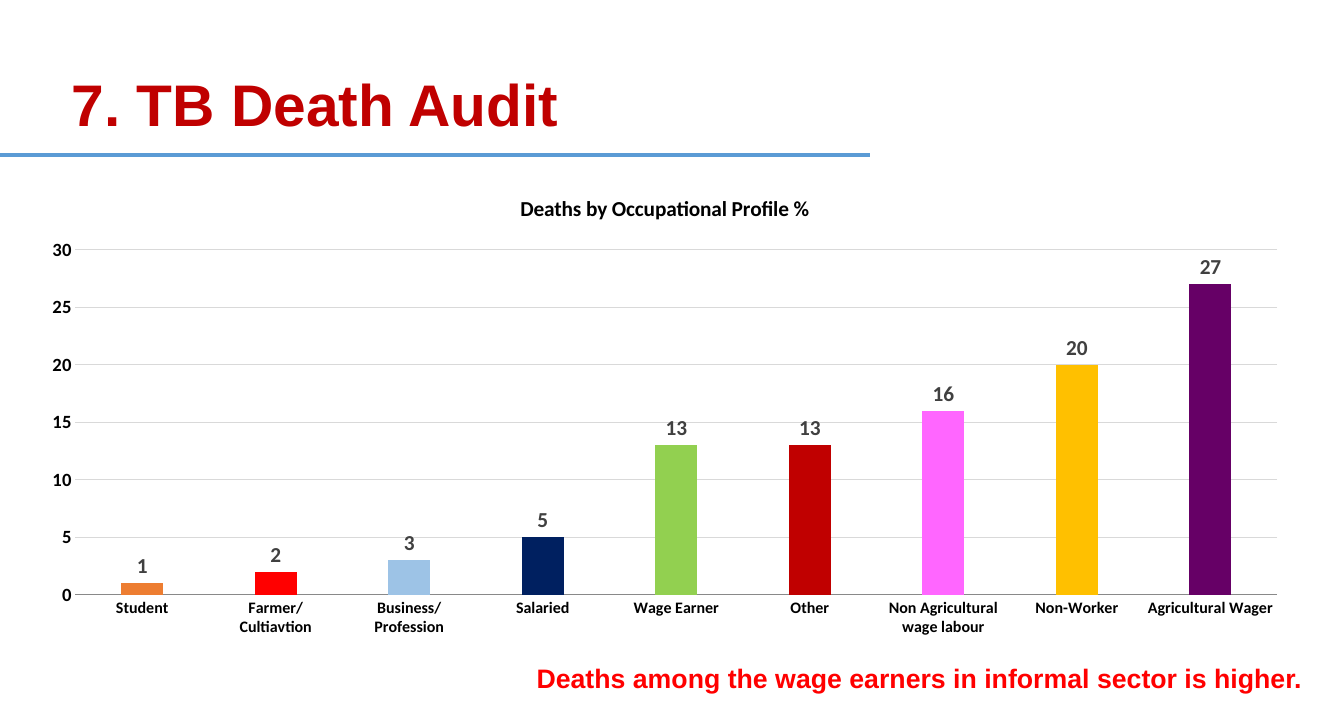
"""Build the TB death audit slide with its occupation chart."""
from dataclasses import dataclass

from lxml import etree
from pptx import Presentation
from pptx import util as u
from pptx.chart.data import CategoryChartData
from pptx.dml.color import RGBColor
from pptx.enum import chart as ch, shapes, text
from pptx.oxml.ns import qn

WIDE, HIGH = u.Inches(14), u.Inches(7.5)
GRID = 100


@dataclass(frozen=True)
class Box:
    """Place on a grid of 100 columns and 100 rows."""
    col: float
    row: float
    cols: float
    rows: float

    def emu(self) -> tuple:
        """Return left, top, width and height."""
        return (across(self.col), down(self.row),
                across(self.cols), down(self.rows))


@dataclass(frozen=True)
class Label:
    """Line of bold text with its look."""
    words: str
    box: Box
    size: int
    color: str
    align: text.PP_ALIGN
    wrap: bool


@dataclass(frozen=True)
class Bar:
    """Column of the chart."""
    name: str
    value: int
    color: str


LABELS = (
    Label("7. TB Death Audit", Box(4.29, 8.8, 38, 11.2), 44, "C00000",
          text.PP_ALIGN.RIGHT, False),
    Label("Deaths among the wage earners in informal sector is higher.",
          Box(38.21, 91.2, 60.43, 5.87), 20, "FF0000",
          text.PP_ALIGN.CENTER, True),
)
BARS = (
    Bar("Student", 1, "ED7D31"),
    Bar("Farmer/Cultiavtion", 2, "FF0000"),
    Bar("Business/Profession", 3, "9DC3E6"),
    Bar("Salaried", 5, "002060"),
    Bar("Wage Earner", 13, "92D050"),
    Bar("Other", 13, "C00000"),
    Bar("Non Agricultural wage labour", 16, "FF66FF"),
    Bar("Non-Worker", 20, "FFC000"),
    Bar("Agricultural Wager", 27, "660066"),
)


def across(cols: float) -> int:
    """Turn columns into a length."""
    return int(WIDE * cols / GRID)


def down(rows: float) -> int:
    """Turn rows into a length."""
    return int(HIGH * rows / GRID)


def tint(form, color: str) -> None:
    """Set the colour of a font or line."""
    form.color.rgb = RGBColor.from_string(color)


def paint(fill, color: str) -> None:
    """Set a solid fill."""
    fill.solid()
    fill.fore_color.rgb = RGBColor.from_string(color)


def apply(item, **values) -> None:
    """Set each named attribute."""
    for name, value in values.items():
        setattr(item, name, value)


def style(font, size: int, color: str, face: str = "Calibri") -> None:
    """Make a font bold with size, colour and face."""
    apply(font, name=face, size=u.Pt(size), bold=True)
    tint(font, color)


def write(slide, label: Label) -> None:
    """Add a text box."""
    frame = slide.shapes.add_textbox(*label.box.emu()).text_frame
    apply(frame, word_wrap=label.wrap,
          auto_size=text.MSO_AUTO_SIZE.SHAPE_TO_FIT_TEXT)
    para = frame.paragraphs[0]
    para.alignment = label.align
    run = para.add_run()
    run.text = label.words
    style(run.font, label.size, label.color, "Arial")


def rule(slide, row: float, cols: float) -> None:
    """Draw the line under the heading."""
    y = down(row)
    line = slide.shapes.add_connector(
        shapes.MSO_CONNECTOR.STRAIGHT, 0, y, across(cols), y)
    line.line.width = u.Pt(3)
    tint(line.line, "5B9BD5")
    etree.SubElement(line._element.spPr, qn("a:effectLst"))


def plot(slide, box: Box) -> None:
    """Add the column chart."""
    data = CategoryChartData(number_format="0")
    data.categories = [bar.name for bar in BARS]
    data.add_series("Deaths %", [bar.value for bar in BARS])
    chart = slide.shapes.add_chart(
        ch.XL_CHART_TYPE.COLUMN_CLUSTERED, *box.emu(), data).chart
    style(chart.font, 11, "000000")
    apply(chart, has_legend=False, has_title=True)
    head = chart.chart_title
    head.include_in_layout = False
    run = head.text_frame.paragraphs[0].add_run()
    run.text = "Deaths by Occupational Profile %"
    style(run.font, 16, "000000")

    cat, val = chart.category_axis, chart.value_axis
    for axis, size in ((cat, 12), (val, 14)):
        apply(axis, major_tick_mark=ch.XL_TICK_MARK.NONE,
              minor_tick_mark=ch.XL_TICK_MARK.NONE)
        style(axis.tick_labels.font, size, "000000")
    tint(cat.format.line, "898989")
    apply(val, minimum_scale=0, maximum_scale=30, major_unit=5)
    apply(val.tick_labels, number_format="0", number_format_is_linked=False)
    val.format.line.fill.background()
    grid = val.major_gridlines.format.line
    grid.width = u.Pt(0.75)
    tint(grid, "D9D9D9")

    body = chart.plots[0]
    apply(body, gap_width=219, overlap=-27, vary_by_categories=False,
          has_data_labels=True)
    tags = body.data_labels
    apply(tags, show_value=True, number_format="0",
          number_format_is_linked=False,
          position=ch.XL_LABEL_POSITION.OUTSIDE_END)
    style(tags.font, 16, "404040")
    series = body.series[0]
    paint(series.format.fill, BARS[0].color)
    for num, bar in enumerate(BARS):
        paint(series.points[num].format.fill, bar.color)


def main() -> None:
    """Build and save the slide."""
    deck = Presentation()
    apply(deck, slide_width=WIDE, slide_height=HIGH)
    slide = deck.slides.add_slide(deck.slide_layouts[6])
    plot(slide, Box(2, 24.4, 94.93, 65.33))
    rule(slide, 21.6, 64.71)
    for label in LABELS:
        write(slide, label)
    deck.save("out.pptx")


if __name__ == "__main__":
    main()
